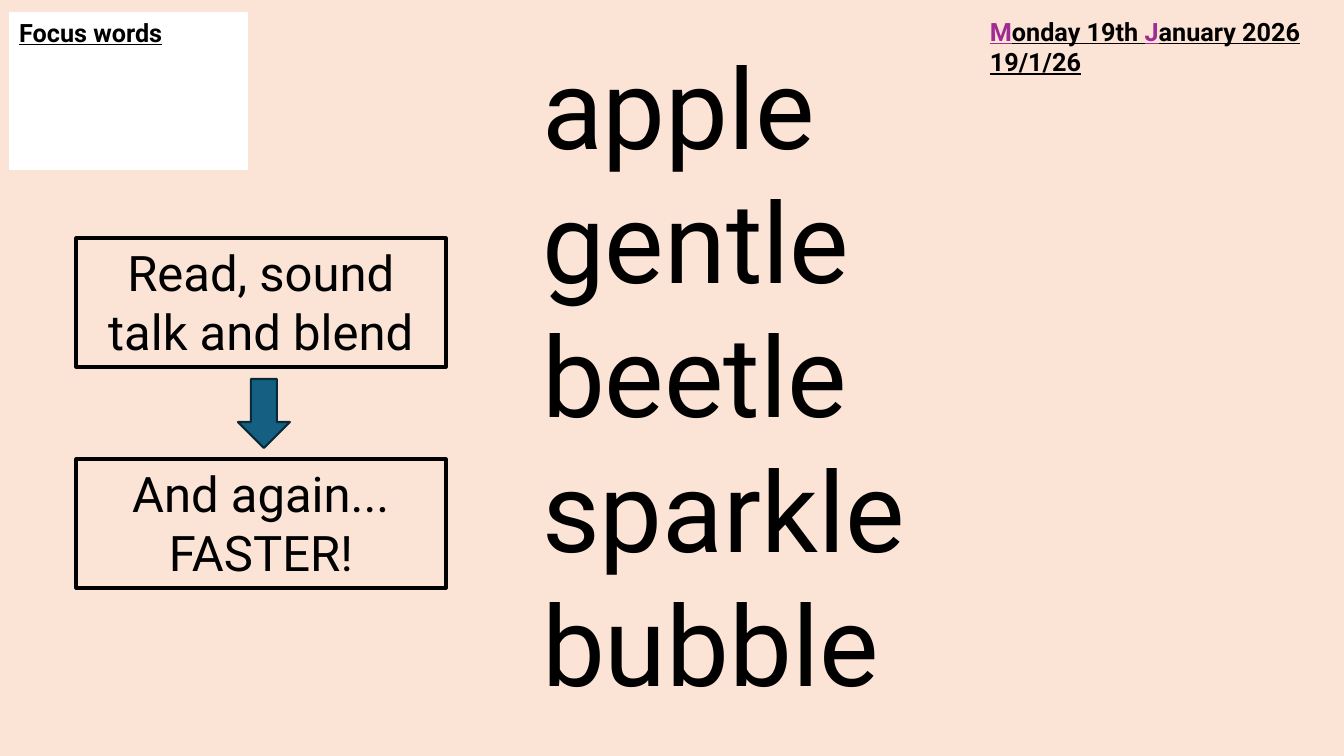
import dataclasses

import pptx
import pptx.dml.color
import pptx.enum.shapes
import pptx.enum.text
import pptx.oxml.ns
import pptx.util
from lxml import etree

SLIDE_SIZE = (1344, 756)
EMU_PER_PX = 12192000 / 1344
ALIGN = pptx.enum.text.PP_ALIGN
SHAPE = pptx.enum.shapes.MSO_SHAPE


@dataclasses.dataclass(frozen=True)
class Theme:
    font: str = "Roboto"
    background: str = "FBE3D6"
    label_fill: str = "FFFFFF"
    ink: str = "000000"
    capital: str = "A02B93"
    arrow_fill: str = "156082"
    arrow_line: str = "092A39"
    heading_size: int = 18
    step_size: int = 35
    word_size: int = 80


THEME = Theme()


def px(length):
    return pptx.util.Emu(round(length * EMU_PER_PX))


def rgb(colour):
    return pptx.dml.color.RGBColor.from_string(colour)


def place(shape, left, top, width, height):
    shape.left, shape.top = px(left), px(top)
    shape.width, shape.height = px(width), px(height)


def prepare_frame(shape):
    frame = shape.text_frame
    frame.word_wrap = True
    frame.auto_size = pptx.enum.text.MSO_AUTO_SIZE.SHAPE_TO_FIT_TEXT
    frame.vertical_anchor = pptx.enum.text.MSO_ANCHOR.TOP
    return frame


def format_run(run, size, colour=THEME.ink, heading=False):
    run.font.name = THEME.font
    run.font.size = pptx.util.Pt(size)
    run.font.color.rgb = rgb(colour)
    if heading:
        run.font.bold = run.font.underline = True


def set_line(shape, colour, width):
    shape.line.color.rgb = rgb(colour)
    shape.line.width = pptx.util.Pt(width)


def fill_title(slide, text):
    title = slide.shapes.title
    place(title, 9, 12, 239, 40)
    title.fill.solid()
    title.fill.fore_color.rgb = rgb(THEME.label_fill)
    frame = prepare_frame(title)
    frame.text = text
    paragraph = frame.paragraphs[0]
    paragraph.alignment = ALIGN.LEFT
    format_run(paragraph.runs[0], THEME.heading_size, heading=True)


def fill_words(slide, words):
    body = slide.placeholders[1]
    place(body, 532, 32, 998, 688)
    frame = prepare_frame(body)
    frame.text = "\n".join(words)
    for paragraph in frame.paragraphs:
        properties = paragraph._p.get_or_add_pPr()
        properties.set("marL", "0")
        properties.set("indent", "0")
        etree.SubElement(properties, pptx.oxml.ns.qn("a:buNone"))
        paragraph.space_before = pptx.util.Pt(0)
        format_run(paragraph.runs[0], THEME.word_size)


def add_preset(slide, preset, left, top, width, height):
    shape = slide.shapes.add_shape(
        preset, px(left), px(top), px(width), px(height))
    shape.shadow.inherit = False
    return shape


def add_step(slide, top, text):
    box = add_preset(slide, SHAPE.RECTANGLE, 76, top, 370, 129)
    box.fill.background()
    set_line(box, THEME.ink, 2.25)
    frame = prepare_frame(box)
    frame.text = text
    paragraph = frame.paragraphs[0]
    paragraph.alignment = ALIGN.CENTER
    format_run(paragraph.runs[0], THEME.step_size)


def add_down_arrow(slide):
    arrow = add_preset(slide, SHAPE.DOWN_ARROW, 238, 379, 52, 69)
    arrow.fill.solid()
    arrow.fill.fore_color.rgb = rgb(THEME.arrow_fill)
    set_line(arrow, THEME.arrow_line, 1.5)


def add_date(slide, lines):
    """Each line is a list of (text, colour) pieces."""
    box = slide.shapes.add_textbox(px(980), px(11), px(390), px(72))
    frame = prepare_frame(box)
    for index, pieces in enumerate(lines):
        paragraph = frame.add_paragraph() if index else frame.paragraphs[0]
        for text, colour in pieces:
            run = paragraph.add_run()
            run.text = text
            format_run(run, THEME.heading_size, colour, heading=True)


def main():
    presentation = pptx.Presentation()
    presentation.slide_width, presentation.slide_height = map(px, SLIDE_SIZE)
    slide = presentation.slides.add_slide(presentation.slide_layouts[1])
    slide.background.fill.solid()
    slide.background.fill.fore_color.rgb = rgb(THEME.background)

    fill_title(slide, "Focus words")
    fill_words(slide, ["apple", "gentle", "beetle", "sparkle", "bubble"])
    add_step(slide, 238, "Read, sound talk and blend")
    add_step(slide, 459, "And again... FASTER!")
    add_down_arrow(slide)
    add_date(slide, [
        [("M", THEME.capital), ("onday 19th ", THEME.ink),
         ("J", THEME.capital), ("anuary 2026", THEME.ink)],
        [("19/1/26", THEME.ink)],
    ])
    presentation.save("out.pptx")


if __name__ == "__main__":
    main()
